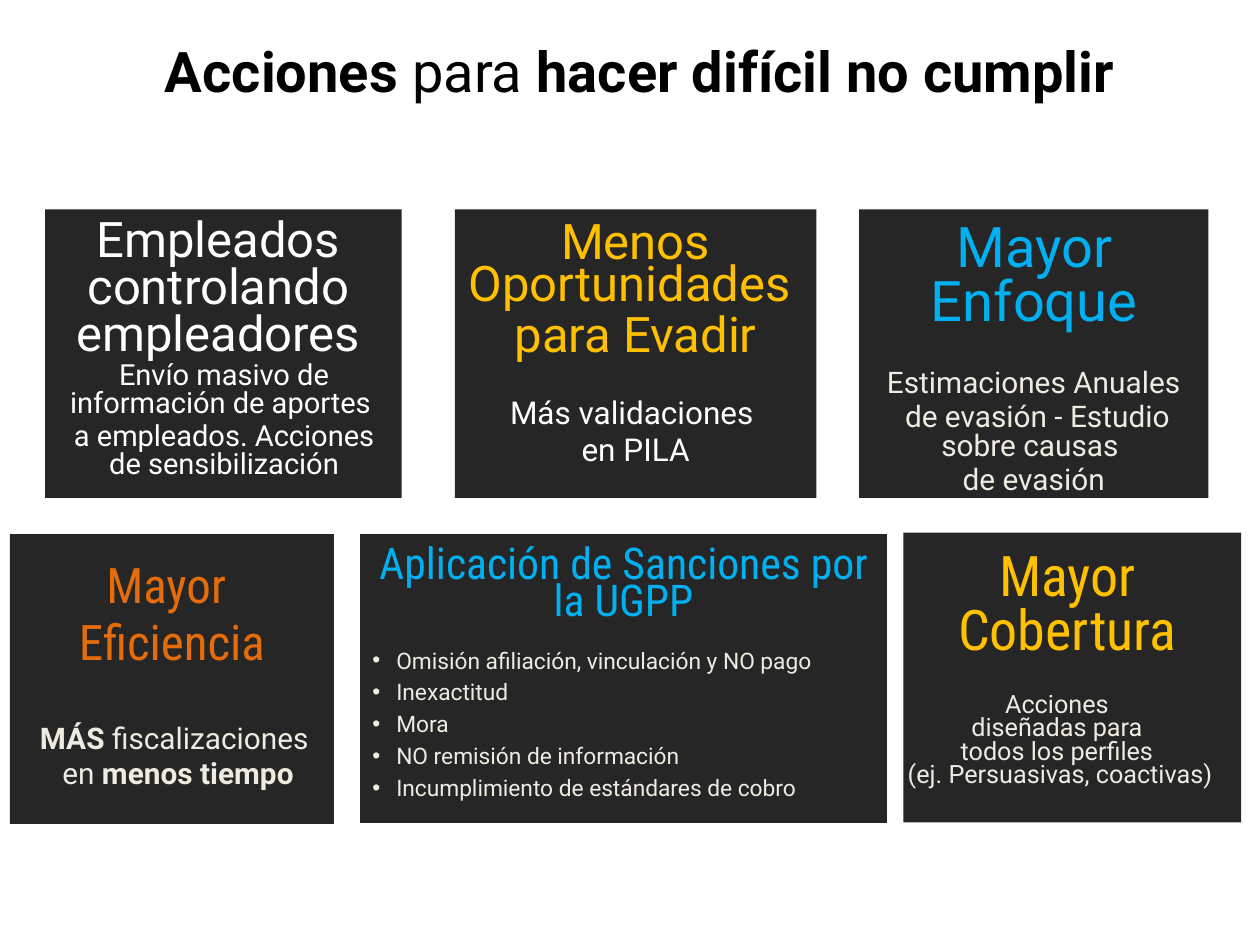
from dataclasses import dataclass
from typing import NamedTuple

from lxml.etree import SubElement
from pptx import Presentation
from pptx.dml.color import RGBColor
from pptx.enum.shapes import MSO_SHAPE as Shape
from pptx.enum.text import MSO_ANCHOR as Anchor, PP_ALIGN as Align
from pptx.oxml.ns import qn
from pptx.util import Cm, Pt


@dataclass(frozen=True)
class Theme:
    card: str = "262626"
    black: str = "000000"
    white: str = "FFFFFF"
    cream: str = "EEECE1"
    yellow: str = "FFC000"
    blue: str = "00B0F0"
    orange: str = "E46C0A"
    regular: str = "Roboto"
    condensed: str = "Roboto Condensed"
    title: float = 32
    large: float = 32
    heading: float = 28
    wide_heading: float = 25
    short_body: float = 18
    body: float = 17
    dense_body: float = 16.6
    small_body: float = 14.4
    listing: float = 13


THEME = Theme()


class Box(NamedTuple):
    """Left, top, width and height in centimetres."""
    left: float
    top: float
    width: float
    height: float

    def inside(self, outer):
        return Box(outer.left + self.left, outer.top + self.top, self.width, self.height)

    def lengths(self):
        return [Cm(value) for value in self]


@dataclass(frozen=True)
class Copy:
    """Text with its style; asterisks enclose bold words."""
    box: Box
    lines: tuple
    size: float
    color: str
    font: str = THEME.regular
    spacing: float = 0.8
    anchor: Anchor = Anchor.TOP
    bullets: bool = False


def add_bullet(para):
    props = para._p.get_or_add_pPr()
    props.set("marL", str(Cm(0.48)))
    props.set("indent", str(-Cm(0.48)))
    SubElement(props, qn("a:buFont")).set("typeface", "Arial")
    SubElement(props, qn("a:buChar")).set("char", "•")


def add_copy(shapes, copy, outer):
    frame = shapes.add_textbox(*copy.box.inside(outer).lengths()).text_frame
    frame.word_wrap = True
    frame.vertical_anchor = copy.anchor
    frame.text = "\n".join(line.replace("*", "") for line in copy.lines)
    for para, line in zip(frame.paragraphs, copy.lines):
        para.alignment = Align.LEFT if copy.bullets else Align.CENTER
        para.line_spacing = copy.spacing
        para.space_before = Pt(round(copy.size * 0.2, 1))
        if copy.bullets:
            add_bullet(para)
        # Odd parts between asterisks are bold
        parts = [(text, index % 2 == 1) for index, text in enumerate(line.split("*")) if text]
        for _ in parts[1:]:
            para.add_run()
        for span, (text, bold) in zip(para.runs, parts):
            span.text = text
            span.font.name = copy.font
            span.font.size = Pt(copy.size)
            span.font.bold = bold
            span.font.color.rgb = RGBColor.from_string(copy.color)


def add_title(page, box):
    lines = ("*Acciones* para *hacer difícil no cumplir*",)
    area = Box(0, 0, box.width, box.height)
    add_copy(page.shapes, Copy(area, lines, THEME.title, THEME.black, spacing=0.9), box)


def add_card(page, box, heading, body):
    shapes = page.shapes.add_group_shape().shapes
    panel = shapes.add_shape(Shape.RECTANGLE, *box.lengths())
    panel.shadow.inherit = False
    panel.fill.solid()
    panel.fill.fore_color.rgb = RGBColor.from_string(THEME.card)
    panel.line.fill.background()
    for copy in (heading, body):
        add_copy(shapes, copy, box)


# Each card: panel, heading and body; text boxes are relative to the panel
CARDS = (
    (Box(0.91, 4.22, 7.19, 5.82),
     Copy(Box(-0.18, 0.08, 7.34, 3.25), ("Empleados controlando empleadores",),
          THEME.heading, THEME.white),
     Copy(Box(0, 2.97, 7.21, 2.84),
          ("Envío masivo de información de aportes ", "a empleados. Acciones de sensibilización"),
          THEME.dense_body, THEME.white)),
    (Box(9.17, 4.22, 7.29, 5.82),
     Copy(Box(0, 0.23, 7.29, 2.74), ("Menos Oportunidades ", "para Evadir"),
          THEME.heading, THEME.yellow, spacing=0.7),
     Copy(Box(0, 3.23, 7.29, 2.59), ("Más validaciones ", "en PILA"),
          THEME.short_body, THEME.white, anchor=Anchor.MIDDLE)),
    (Box(17.32, 4.22, 7.04, 5.82),
     Copy(Box(0.05, 0.03, 6.96, 2.74), ("Mayor Enfoque",),
          THEME.large, THEME.blue, anchor=Anchor.MIDDLE),
     Copy(Box(0, 3.12, 7.04, 2.51),
          ("Estimaciones Anuales", " de evasión - Estudio sobre causas ", "de evasión"),
          THEME.body, THEME.cream)),
    (Box(0.2, 10.77, 6.53, 5.84),
     Copy(Box(0, 0.51, 6.53, 2.84), ("Mayor ", "Eficiencia"),
          THEME.heading, THEME.orange, THEME.condensed),
     Copy(Box(-0.38, 3.4, 7.54, 2.24), ("*MÁS* fiscalizaciones ", "en *menos tiempo*"),
          THEME.body, THEME.cream, anchor=Anchor.MIDDLE)),
    (Box(7.26, 10.77, 10.62, 5.82),
     Copy(Box(0, 0.2, 10.62, 1.78), ("Aplicación de Sanciones por la UGPP",),
          THEME.wide_heading, THEME.blue, THEME.condensed, spacing=0.7),
     Copy(Box(0, 1.9, 10.62, 3.84),
          ("Omisión afiliación, vinculación y NO pago", "Inexactitud", "Mora",
           "NO remisión de información", "Incumplimiento de estándares de cobro"),
          THEME.listing, THEME.cream, spacing=1.0, anchor=Anchor.MIDDLE, bullets=True)),
    (Box(18.21, 10.74, 6.81, 5.84),
     Copy(Box(-0.46, 0.3, 7.54, 2.84), ("Mayor Cobertura",),
          THEME.large, THEME.yellow, THEME.condensed),
     Copy(Box(-0.61, 3.12, 7.54, 2.24),
          ("Acciones ", "diseñadas para ", "todos los perfiles ", "(ej. Persuasivas, coactivas)"),
          THEME.small_body, THEME.cream, spacing=0.6, anchor=Anchor.MIDDLE)),
)


def main():
    deck = Presentation()
    deck.slide_width, deck.slide_height = Cm(25.4), Cm(19.05)
    page = deck.slides.add_slide(deck.slide_layouts[6])
    add_title(page, Box(2.97, 0.76, 19.86, 1.09))
    for box, heading, body in CARDS:
        add_card(page, box, heading, body)
    deck.save("out.pptx")


if __name__ == "__main__":
    main()
